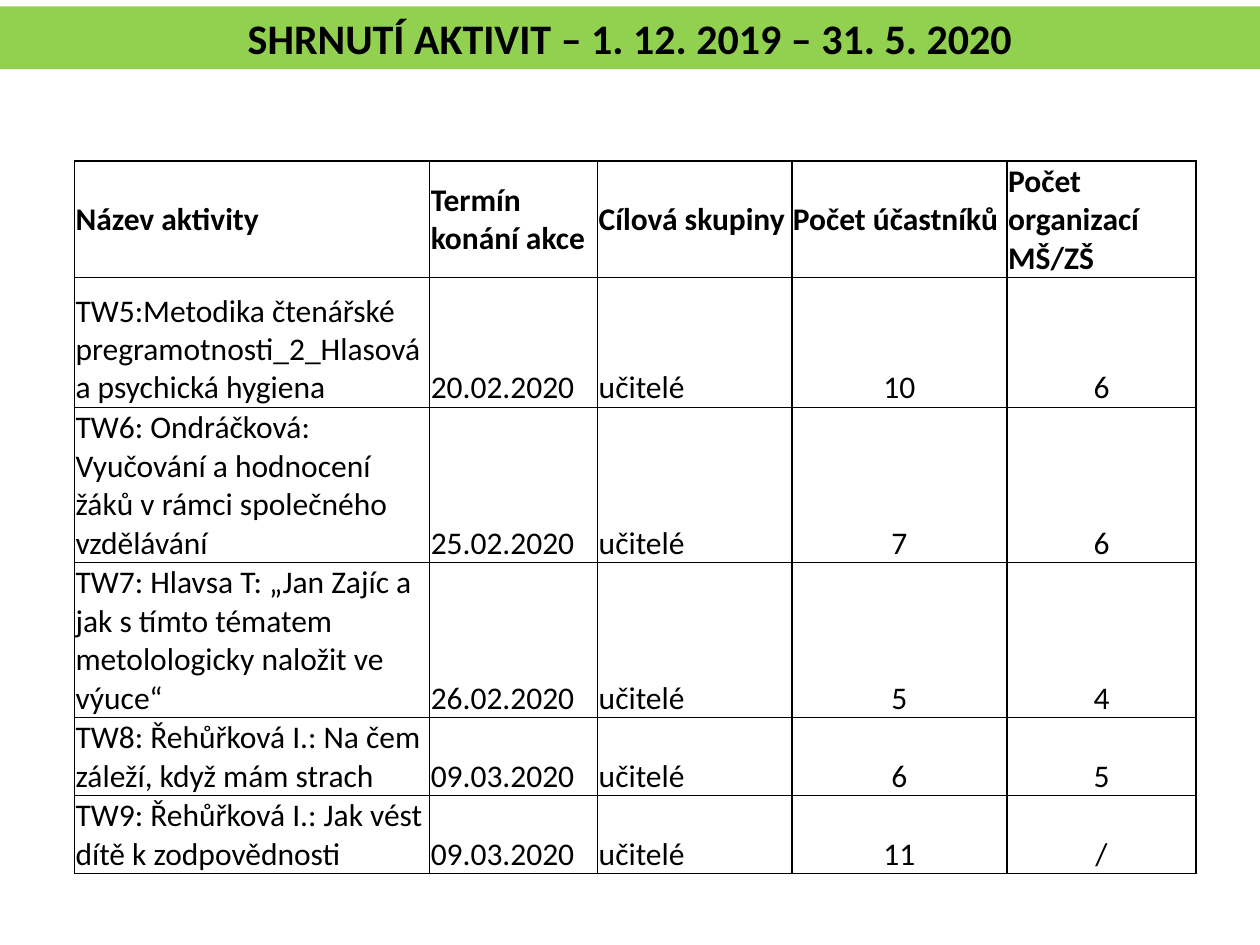
from dataclasses import dataclass

from lxml.etree import SubElement
from pptx import Presentation
from pptx.dml.color import RGBColor
from pptx.enum.shapes import MSO_SHAPE
from pptx.enum.text import MSO_ANCHOR, PP_ALIGN
from pptx.oxml.ns import qn
from pptx.slide import Slide
from pptx.table import _Cell
from pptx.text.text import TextFrame
from pptx.util import Pt


@dataclass(frozen=True)
class Theme:
    font: str = "Calibri"
    text: str = "000000"
    banner: str = "92D050"
    border: str = "000000"
    border_width: float = 1
    title_size: float = 24
    table_size: float = 18


@dataclass(frozen=True)
class Activity:
    name: str
    date: str
    target_group: str
    participants: str
    organizations: str

    def values(self) -> tuple[str, ...]:
        return (self.name, self.date, self.target_group,
                self.participants, self.organizations)


THEME = Theme()
TITLE = "SHRNUTÍ AKTIVIT – 1. 12. 2019 – 31. 5. 2020"
HEADER = Activity("Název aktivity", "Termín konání akce", "Cílová skupiny",
                  "Počet účastníků", "Počet organizací MŠ/ZŠ")
ACTIVITIES = [
    Activity("TW5:Metodika čtenářské pregramotnosti_2_Hlasová a psychická hygiena",
             "20.02.2020", "učitelé", "10", "6"),
    Activity("TW6: Ondráčková: Vyučování a hodnocení žáků v rámci společného vzdělávání",
             "25.02.2020", "učitelé", "7", "6"),
    Activity("TW7: Hlavsa T: „Jan Zajíc a jak s tímto tématem metolologicky naložit ve výuce“",
             "26.02.2020", "učitelé", "5", "4"),
    Activity("TW8: Řehůřková I.: Na čem záleží, když mám strach",
             "09.03.2020", "učitelé", "6", "5"),
    Activity("TW9: Řehůřková I.: Jak vést dítě k zodpovědnosti",
             "09.03.2020", "učitelé", "11", "/"),
]
COLUMN_WIDTHS = (203, 96, 111, 123, 108)
ROW_HEIGHTS = (45.4, 74.2, 74.2, 74.2, 44.6, 44.6)
FIRST_COUNT_COLUMN = 3
CELL_FORMAT = {"margin_left": Pt(0.7), "margin_top": Pt(0.7),
               "margin_right": Pt(0.7), "margin_bottom": Pt(0)}


def apply_format(target: object, values: dict[str, object]) -> None:
    for name, value in values.items():
        setattr(target, name, value)


def write_text(frame: TextFrame, text: str, size: float, bold: bool,
               alignment: PP_ALIGN) -> None:
    paragraph = frame.paragraphs[0]
    paragraph.alignment = alignment
    run = paragraph.add_run()
    run.text = text
    apply_format(run.font, {"name": THEME.font, "size": Pt(size), "bold": bold})
    run.font.color.rgb = RGBColor.from_string(THEME.text)


def add_borders(cell: _Cell) -> None:
    """Draw all four cell edges; the schema wants them ahead of the fill."""
    properties = cell._tc.get_or_add_tcPr()
    for position, edge in enumerate(("a:lnL", "a:lnR", "a:lnT", "a:lnB")):
        line = SubElement(properties, qn(edge), w=str(Pt(THEME.border_width)))
        fill = SubElement(line, qn("a:solidFill"))
        SubElement(fill, qn("a:srgbClr"), val=THEME.border)
        properties.insert(position, line)


def add_banner(slide: Slide) -> None:
    shape = slide.shapes.add_shape(MSO_SHAPE.RECTANGLE, Pt(0), Pt(3.6), Pt(720), Pt(36))
    shape.shadow.inherit = False
    shape.fill.solid()
    shape.fill.fore_color.rgb = RGBColor.from_string(THEME.banner)
    shape.line.fill.background()
    apply_format(shape.text_frame,
                 {"word_wrap": True, "vertical_anchor": MSO_ANCHOR.MIDDLE})
    write_text(shape.text_frame, TITLE, THEME.title_size, True, PP_ALIGN.CENTER)


def add_activity_table(slide: Slide) -> None:
    table = slide.shapes.add_table(
        len(ROW_HEIGHTS), len(COLUMN_WIDTHS), Pt(42.5), Pt(92),
        Pt(sum(COLUMN_WIDTHS)), Pt(sum(ROW_HEIGHTS))).table
    apply_format(table, {"first_row": False, "horz_banding": False})
    for column, width in zip(table.columns, COLUMN_WIDTHS):
        column.width = Pt(width)
    for row, height in zip(table.rows, ROW_HEIGHTS):
        row.height = Pt(height)

    for row_index, activity in enumerate([HEADER, *ACTIVITIES]):
        is_header = row_index == 0
        for column_index, text in enumerate(activity.values()):
            cell = table.cell(row_index, column_index)
            is_count = not is_header and column_index >= FIRST_COUNT_COLUMN
            apply_format(cell, CELL_FORMAT)
            cell.vertical_anchor = MSO_ANCHOR.MIDDLE if is_header else MSO_ANCHOR.BOTTOM
            cell.fill.background()
            add_borders(cell)
            write_text(cell.text_frame, text, THEME.table_size, is_header,
                       PP_ALIGN.CENTER if is_count else PP_ALIGN.LEFT)


def main() -> None:
    presentation = Presentation()
    apply_format(presentation, {"slide_width": Pt(720), "slide_height": Pt(540)})
    slide = presentation.slides.add_slide(presentation.slide_layouts[6])
    add_activity_table(slide)
    add_banner(slide)
    presentation.save("out.pptx")


if __name__ == "__main__":
    main()
